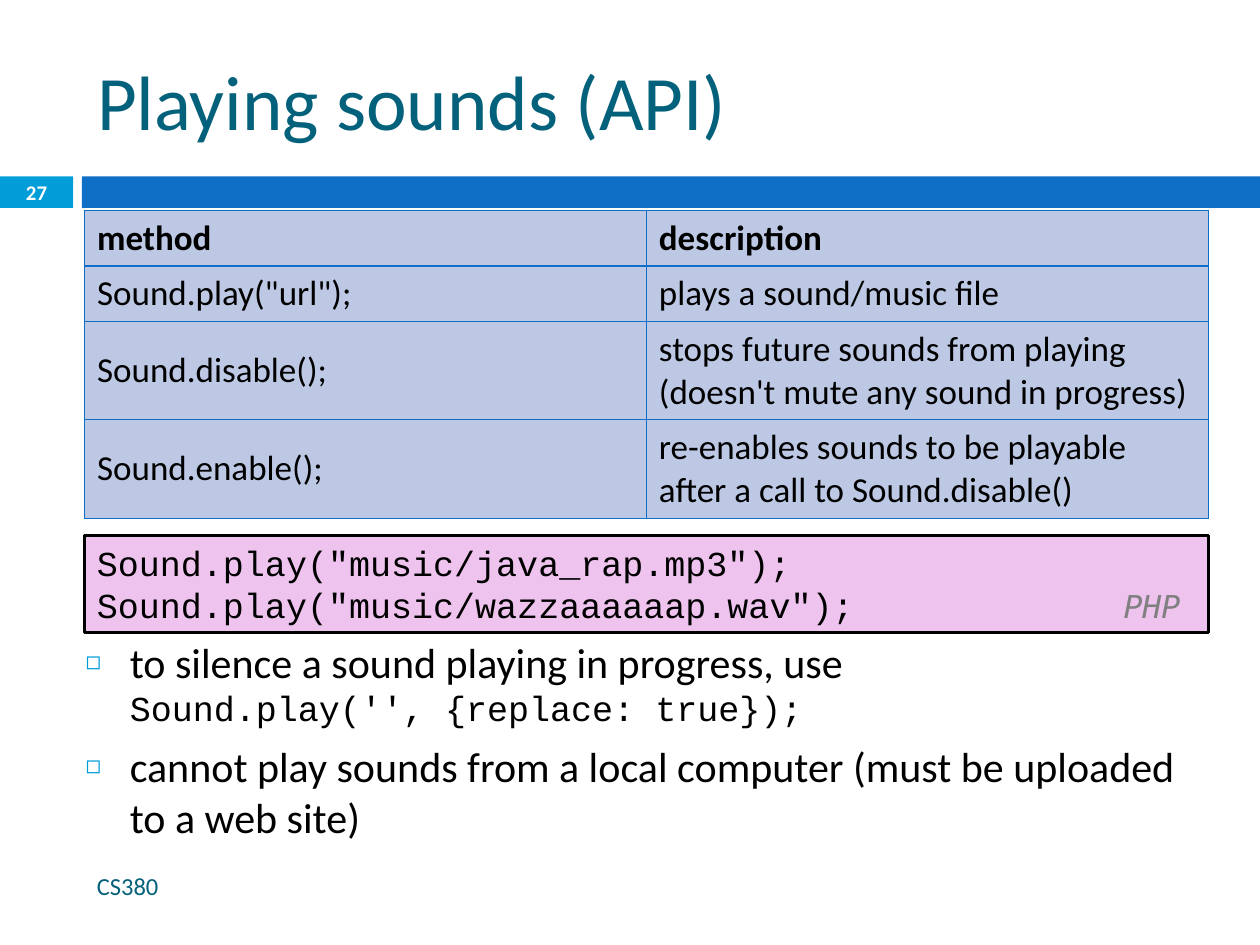
"""Build the "Playing sounds (API)" slide on a grid of 100 columns by 75 rows."""
from dataclasses import dataclass
from typing import Optional

from lxml.etree import SubElement
from pptx import Presentation
from pptx.dml.color import RGBColor
from pptx.enum.shapes import MSO_SHAPE as Shape
from pptx.enum.text import MSO_ANCHOR as Anchor, MSO_AUTO_SIZE as AutoSize, PP_ALIGN as Align
from pptx.oxml.ns import qn
from pptx.util import Inches, Pt

COLORS = {
    "black": "000000", "white": "FFFFFF", "gray": "808080", "title": "04617B",
    "cyan": "009DD9", "blue": "0F6FC6", "cell": "BDC8E4", "pink": "EEC4EE",
}
SANS, CODE, LABEL = "Calibri", "Courier New", "DejaVu Sans Mono"
COLUMNS, ROWS = 100, 75
ROW_HEIGHTS = (4.4, 4.4, 7.8, 7.8)
METHODS = (
    ("method", "description"),
    ('Sound.play("url");', "plays a sound/music file"),
    ("Sound.disable();", "stops future sounds from playing (doesn't mute any sound in progress)"),
    ("Sound.enable();", "re-enables sounds to be playable after a call to Sound.disable()"),
)


@dataclass(frozen=True)
class Box:
    """A frame in grid columns and rows."""
    left: float
    top: float
    width: float
    height: float


@dataclass(frozen=True)
class Style:
    """The look of a piece of text."""
    size: float
    color: str = "black"
    name: str = SANS
    bold: bool = False
    italic: bool = False


TITLE, CELL, CODE_TEXT = Style(44, "title"), Style(20), Style(20, name=CODE)
HEADER, BULLET = Style(20, bold=True), Style(24)
FOOTER, NUMBER = Style(14, "title"), Style(11.9, "white", bold=True)
LANGUAGE = Style(18, "gray", LABEL, italic=True)


def rgb(name: str) -> RGBColor:
    """Look up a named colour."""
    return RGBColor.from_string(COLORS[name])


def grid(units: float) -> int:
    """Turn grid units into a length."""
    return Inches(units / 10)


def frame(box: Box) -> tuple:
    """Give left, top, width and height as lengths."""
    return tuple(grid(value) for value in (box.left, box.top, box.width, box.height))


def place(shape, box: Box) -> None:
    """Move and resize a shape."""
    shape.left, shape.top, shape.width, shape.height = frame(box)


def apply_style(font, style: Style) -> None:
    """Format a paragraph or run font."""
    font.size, font.name = Pt(style.size), style.name
    font.bold, font.italic = style.bold, style.italic
    font.color.rgb = rgb(style.color)


def write(text_frame, text: str, style: Style, align: Align = Align.LEFT) -> None:
    """Fill a vertically centred text frame with one paragraph."""
    text_frame.word_wrap, text_frame.auto_size = True, AutoSize.NONE
    text_frame.vertical_anchor = Anchor.MIDDLE
    paragraph = text_frame.paragraphs[0]
    paragraph.text, paragraph.alignment = text, align
    apply_style(paragraph.font, style)


def add_run(paragraph, text: str, style: Style) -> None:
    """Append a formatted run."""
    run = paragraph.add_run()
    run.text = text
    apply_style(run.font, style)


def add_rectangle(slide, box: Box, fill: str, line: Optional[str] = None):
    """Draw a flat rectangle, outlined when a line colour is given."""
    shape = slide.shapes.add_shape(Shape.RECTANGLE, *frame(box))
    shape.shadow.inherit = False
    shape.fill.solid()
    shape.fill.fore_color.rgb = rgb(fill)
    if line:
        shape.line.color.rgb, shape.line.width = rgb(line), Pt(1.5)
    else:
        shape.line.fill.background()
    return shape


def add_label(slide, box: Box, text: str, style: Style, align: Align = Align.LEFT) -> None:
    """Add a one-line text box."""
    write(slide.shapes.add_textbox(*frame(box)).text_frame, text, style, align)


def add_borders(cell, color: str) -> None:
    """Outline a cell; its borders must precede its fill."""
    properties = cell._tc.get_or_add_tcPr()
    for side in ("lnL", "lnR", "lnT", "lnB"):
        line = SubElement(properties, qn(f"a:{side}"), w=str(Pt(0.79)))
        fill = SubElement(line, qn("a:solidFill"))
        SubElement(fill, qn("a:srgbClr"), val=COLORS[color])


def add_method_table(slide, box: Box) -> None:
    """Add the table of methods."""
    table = slide.shapes.add_table(len(METHODS), len(METHODS[0]), *frame(box)).table
    for row, (height, texts) in enumerate(zip(ROW_HEIGHTS, METHODS)):
        table.rows[row].height = grid(height)
        for column, text in enumerate(texts):
            cell = table.cell(row, column)
            add_borders(cell, "blue")
            cell.fill.solid()
            cell.fill.fore_color.rgb = rgb("cell")
            cell.vertical_anchor = Anchor.MIDDLE
            paragraph = cell.text_frame.paragraphs[0]
            paragraph.text = text
            apply_style(paragraph.font, CELL if row else HEADER)


def add_code(slide, box: Box) -> None:
    """Add the code sample with its language at a right tab stop."""
    text_frame = add_rectangle(slide, box, "pink", "black").text_frame
    text_frame.word_wrap, text_frame.vertical_anchor = True, Anchor.TOP
    first, second = text_frame.paragraphs[0], text_frame.add_paragraph()
    first.alignment = second.alignment = Align.LEFT
    add_run(first, 'Sound.play("music/java_rap.mp3");', CODE_TEXT)
    add_run(second, 'Sound.play("music/wazzaaaaaap.wav");', CODE_TEXT)
    add_run(second, "\tPHP", LANGUAGE)
    tabs = SubElement(second._p.get_or_add_pPr(), qn("a:tabLst"))
    SubElement(tabs, qn("a:tab"), pos=str(grid(86)), algn="r")


def set_bullet(paragraph) -> None:
    """Give a paragraph a hanging square bullet."""
    paragraph.space_before = Pt(7)
    properties = paragraph._p.get_or_add_pPr()
    properties.set("marL", str(grid(3.5)))
    properties.set("indent", str(-grid(3.5)))
    color = SubElement(properties, qn("a:buClr"))
    SubElement(color, qn("a:srgbClr"), val=COLORS["cyan"])
    SubElement(properties, qn("a:buSzPct"), val="60000")
    SubElement(properties, qn("a:buChar"), char="◻")


def fill_notes_list(body) -> None:
    """Write the two bulleted remarks."""
    text_frame = body.text_frame
    text_frame.auto_size, text_frame.vertical_anchor = AutoSize.NONE, Anchor.TOP
    first, second = text_frame.paragraphs[0], text_frame.add_paragraph()
    add_run(first, "to silence a sound playing in progress, use", BULLET)
    first.add_line_break()
    add_run(first, "Sound.play('', {replace: true});", CODE_TEXT)
    add_run(second, "cannot play sounds from a local computer (must be uploaded to a web site)", BULLET)
    for paragraph in (first, second):
        set_bullet(paragraph)


def main() -> None:
    """Assemble and save the slide."""
    presentation = Presentation()
    presentation.slide_width, presentation.slide_height = grid(COLUMNS), grid(ROWS)
    slide = presentation.slides.add_slide(presentation.slide_layouts[1])
    title, body = slide.placeholders
    place(title, Box(6.7, 2.5, 89.2, 10.8))
    write(title.text_frame, "Playing sounds (API)", TITLE)
    place(body, Box(5.8, 50, 89.2, 18))
    fill_notes_list(body)
    add_rectangle(slide, Box(0, 14, 5.8, 2.5), "cyan")
    add_rectangle(slide, Box(6.5, 14, COLUMNS - 6.5, 2.5), "blue")
    add_label(slide, Box(0, 13.9, 5.8, 2.7), "27", NUMBER, Align.CENTER)
    add_method_table(slide, Box(6.7, 16.7, 89.2, sum(ROW_HEIGHTS)))
    add_code(slide, Box(6.7, 42.5, 89.2, 7.7))
    add_label(slide, Box(6.7, 68.3, 59.3, 4), "CS380", FOOTER)
    presentation.save("out.pptx")


if __name__ == "__main__":
    main()
